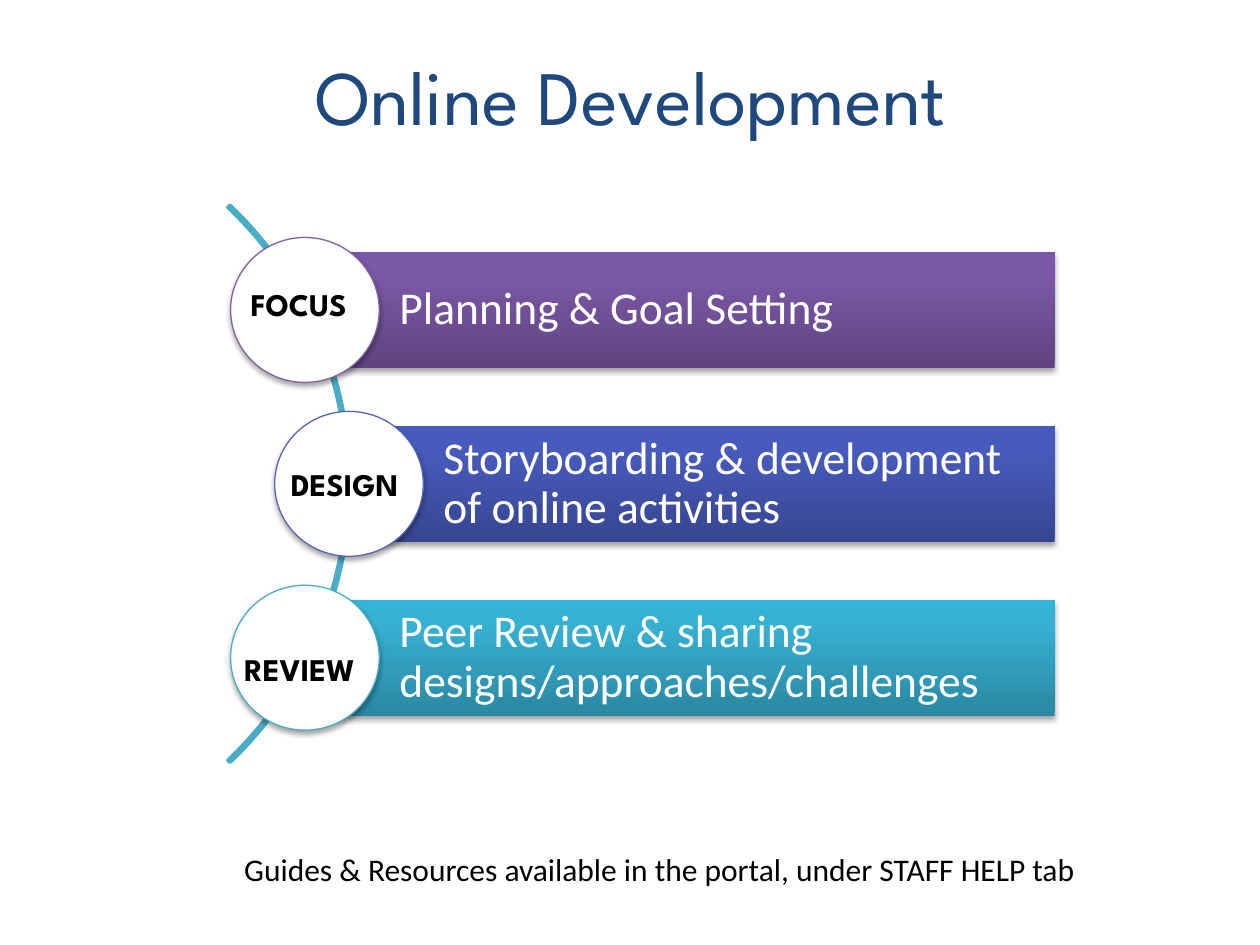
from copy import deepcopy

from lxml import etree
from pptx import Presentation
from pptx.dml.color import RGBColor
from pptx.enum.shapes import MSO_SHAPE as SHAPE
from pptx.enum.text import MSO_ANCHOR as ANCHOR, PP_ALIGN as ALIGN
from pptx.oxml import parse_xml
from pptx.oxml.ns import nsdecls, qn
from pptx.util import Inches, Pt

WHITE = RGBColor(0xFF, 0xFF, 0xFF)
BLACK = RGBColor(0, 0, 0)
NAVY = RGBColor(0x1F, 0x49, 0x7D)
TEAL = RGBColor(0x4B, 0xAC, 0xC6)
PURPLE = RGBColor(0x80, 0x64, 0xA2)
INDIGO = RGBColor(0x57, 0x67, 0xB4)
HEADING, BODY = "League Spartan", "Calibri"

# Content
TITLE = "Online Development"
FOOTER = "Guides & Resources available in the portal, under STAFF HELP tab"
# label, label box (left, top, width), text, bar left, circle line, gradient
STAGES = [
    ("FOCUS", (1.89, 2.21, 1.1), "Planning & Goal Setting",
     2.42, PURPLE, ("5F4480", "7B58A6", "7C57A8")),
    ("DESIGN", (2.21, 3.64, 1.2), "Storyboarding & development of online activities",
     2.77, INDIGO, ("374691", "475BBC", "455ABF")),
    ("REVIEW", (1.84, 5.11, 1.21), "Peer Review & sharing designs/approaches/challenges",
     2.42, TEAL, ("2A88A2", "37B1D2", "34B4D6")),
]
STOPS = (0, 0.8, 1)

# Layout
BAR_TOP, BAR_PITCH, BAR_H, BAR_RIGHT = 2.0, 1.38, 0.92, 8.37
CIRCLE_W, CIRCLE_H = 1.18, 1.15

prs = Presentation()
prs.slide_width, prs.slide_height = Inches(10), Inches(7.5)
s = prs.slides.add_slide(prs.slide_layouts[6])


def write(sp, text, size, font, color, bold=False, align=ALIGN.LEFT,
          anchor=ANCHOR.TOP, wrap=True):
    tf = sp.text_frame
    tf.word_wrap, tf.vertical_anchor = wrap, anchor
    p = tf.paragraphs[0]
    p.alignment = align
    r = p.add_run()
    r.text = text
    for name, value in {"size": Pt(size), "name": font, "bold": bold}.items():
        setattr(r.font, name, value)
    r.font.color.rgb = color
    return tf


def add_text(box, text, size, font, color, **options):
    sp = s.shapes.add_textbox(*map(Inches, box))
    write(sp, text, size, font, color, **options)


def add_shape(kind, box, line=None, width=0.75):
    sp = s.shapes.add_shape(kind, *map(Inches, box))
    sp.shadow.inherit = False
    if line is None:
        sp.line.fill.background()
    else:
        sp.line.color.rgb, sp.line.width = line, Pt(width)
    return sp


def add_shadow(sp):
    effects = sp._element.spPr.find(qn("a:effectLst"))
    effects.append(parse_xml(
        f'<a:outerShdw {nsdecls("a")} blurRad="{Pt(3.1)}" dist="{Pt(1.8)}" '
        'dir="5400000" rotWithShape="0"><a:srgbClr val="000000">'
        '<a:alpha val="35000"/></a:srgbClr></a:outerShdw>'))


def fill_gradient(sp, colors):
    sp.fill.gradient()
    sp.fill.gradient_angle = 90
    stop_list = sp._element.spPr.find(qn("a:gradFill")).find(qn("a:gsLst"))
    stop_list.append(deepcopy(stop_list[0]))
    for stop, position, color in zip(sp.fill.gradient_stops, STOPS, colors):
        stop.position = position
        stop.color.rgb = RGBColor.from_string(color)


# Title
add_text((0.51, 0.13, 9, 1.25), TITLE, 44, HEADING, NAVY,
         align=ALIGN.CENTER, anchor=ANCHOR.MIDDLE)

# Arc behind the stages
arc = add_shape(SHAPE.BLOCK_ARC, (-3.55, 0.75, 6.33, 6.18), TEAL, 2)
arc.fill.background()
for i, value in enumerate((189, 27, 0.004)):
    arc.adjustments[i] = value

# Bars, each with a circle centred on its left end
for i, (_, _, text, left, line, colors) in enumerate(STAGES):
    top = BAR_TOP + i * BAR_PITCH
    bar = add_shape(SHAPE.RECTANGLE, (left, top, BAR_RIGHT - left, BAR_H))
    fill_gradient(bar, colors)
    add_shadow(bar)
    tf = write(bar, text, 26, BODY, WHITE, anchor=ANCHOR.MIDDLE)
    tf.margin_left = Inches(0.75)
    tf.margin_top = tf.margin_right = tf.margin_bottom = Inches(0.07)
    tf.paragraphs[0].line_spacing = 0.9

    circle = add_shape(SHAPE.OVAL, (left - CIRCLE_W / 2, top + (BAR_H - CIRCLE_H) / 2,
                                    CIRCLE_W, CIRCLE_H), line)
    circle.fill.solid()
    circle.fill.fore_color.rgb = WHITE
    add_shadow(circle)

# Circle labels
for label, box, *_ in STAGES:
    add_text((*box, 0.39), label, 18, HEADING, BLACK, bold=True, wrap=False)

# Footer
add_text((1.84, 6.7, 6.87, 0.4), FOOTER, 18, BODY, BLACK, wrap=False)

prs.save("out.pptx")
